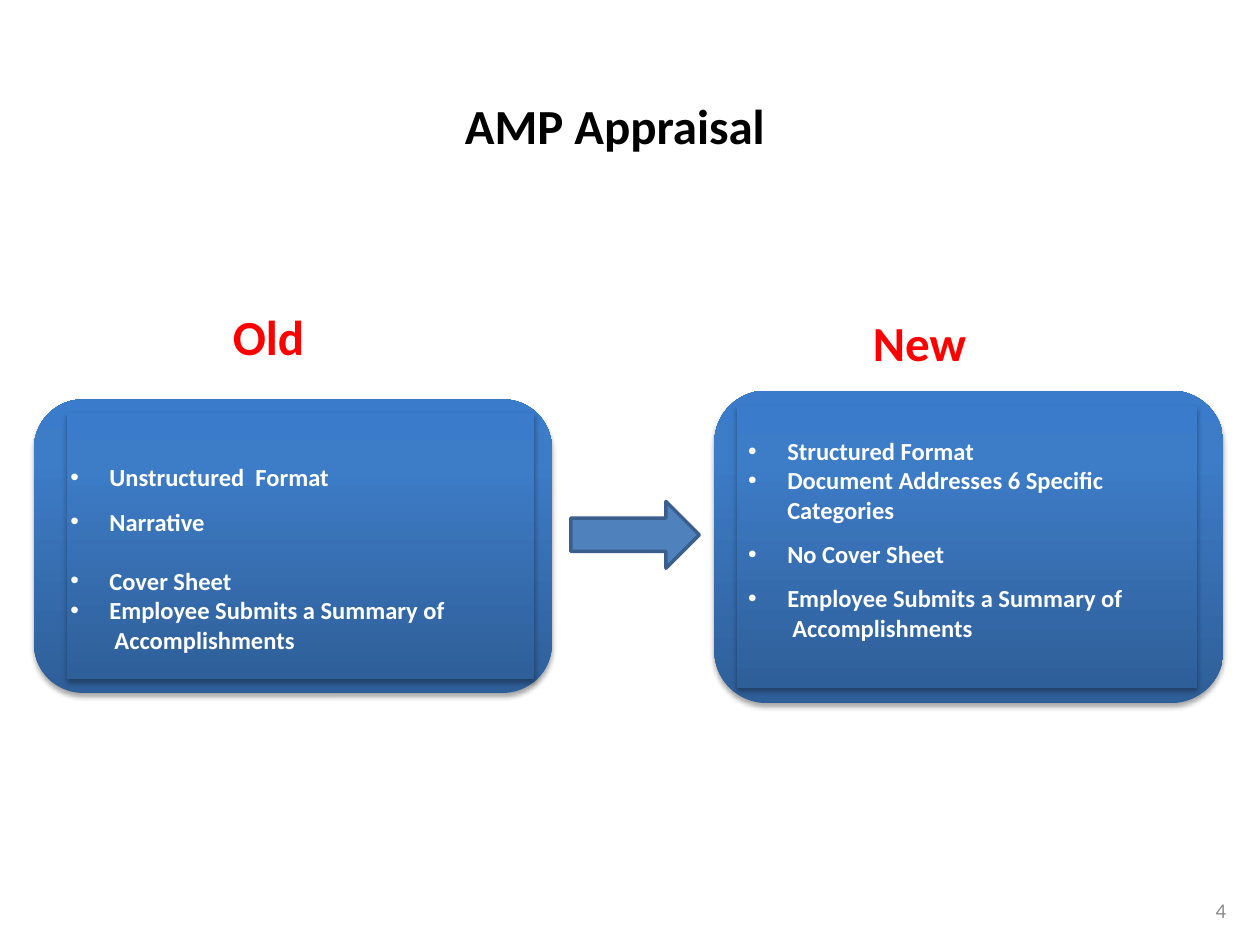
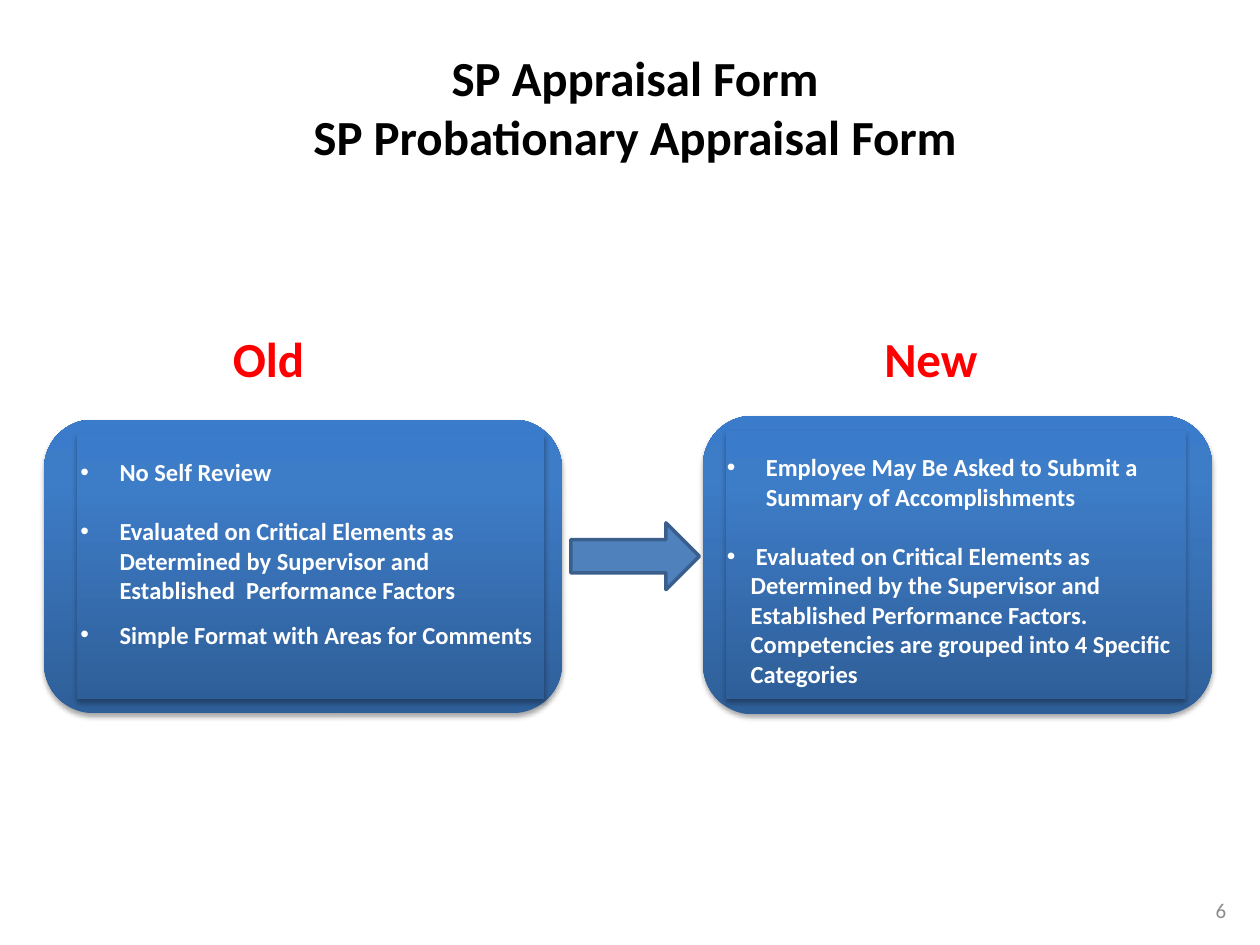
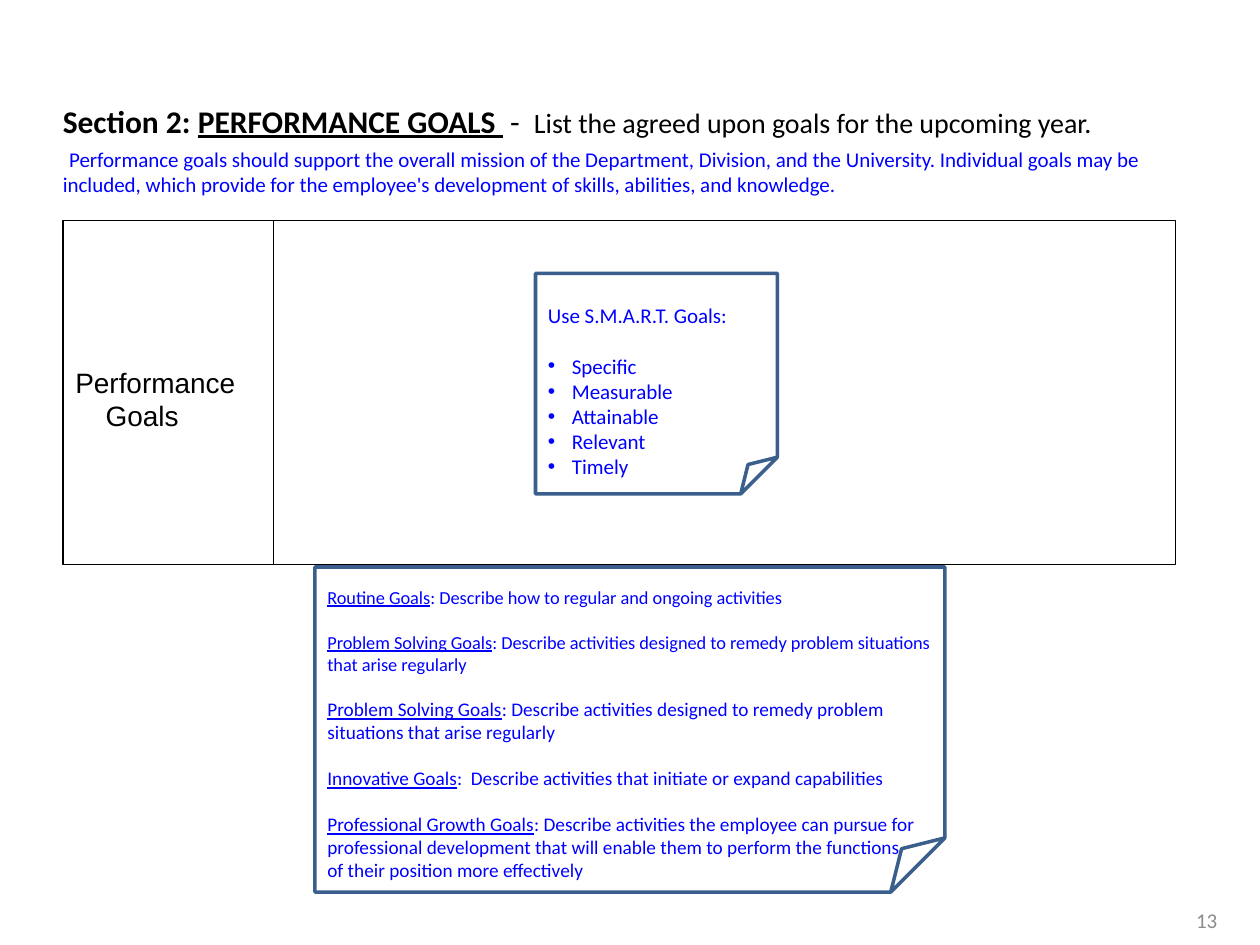
from copy import deepcopy
from dataclasses import dataclass

from lxml import etree
from pptx import Presentation
from pptx.dml.color import RGBColor
from pptx.enum.shapes import MSO_CONNECTOR, MSO_SHAPE
from pptx.enum.text import MSO_ANCHOR, PP_ALIGN
from pptx.oxml.ns import qn
from pptx.util import Inches, Pt

ROUNDED, RECT = MSO_SHAPE.ROUNDED_RECTANGLE, MSO_SHAPE.RECTANGLE
ARROW, NOTE = MSO_SHAPE.RIGHT_ARROW, MSO_SHAPE.FOLDED_CORNER
LEFT, CENTER, RIGHT = PP_ALIGN.LEFT, PP_ALIGN.CENTER, PP_ALIGN.RIGHT
TOP, MIDDLE, BOTTOM = MSO_ANCHOR.TOP, MSO_ANCHOR.MIDDLE, MSO_ANCHOR.BOTTOM


@dataclass(frozen=True)
class Theme:
    font: str = "Calibri"
    table_font: str = "Arial"
    black: str = "000000"
    white: str = "FFFFFF"
    red: str = "FF0000"
    blue: str = "0000FF"
    gray: str = "8C8C8C"
    arrow: str = "4F81BD"
    outline: str = "3A5F8C"
    gradient: tuple = ((0, "2F5F99"), (0.8, "3D7CC7"), (1, "3A7CCB"))
    title: float = 28
    section: float = 18
    cell: float = 16
    body: float = 14
    small: float = 12


T = Theme()


def add_box(s, kind, box, fill=None, line=None, weight=2):
    """Add a preset shape, or a text box when kind is None; a tuple fill is a gradient."""
    box = [Inches(v) for v in box]
    if kind is None:
        return s.shapes.add_textbox(*box)
    sp = s.shapes.add_shape(kind, *box)
    sp.shadow.inherit = False
    if isinstance(fill, tuple):
        sp.fill.gradient()
        sp.fill.gradient_angle = 90
        stops = sp._element.spPr.find(qn("a:gradFill")).find(qn("a:gsLst"))
        stops.append(deepcopy(stops[-1]))
        for stop, (position, color) in zip(sp.fill.gradient_stops, fill):
            stop.position = position
            stop.color.rgb = RGBColor.from_string(color)
        effects = sp._element.spPr.find(qn("a:effectLst"))
        shadow = etree.SubElement(effects, qn("a:outerShdw"), blurRad=str(Pt(3.1)),
                                  dist=str(Pt(1.8)), dir="5400000", rotWithShape="0")
        color = etree.SubElement(shadow, qn("a:srgbClr"), val=T.black)
        etree.SubElement(color, qn("a:alpha"), val="35000")
    elif fill:
        sp.fill.solid()
        sp.fill.fore_color.rgb = RGBColor.from_string(fill)
    else:
        sp.fill.background()
    if line:
        sp.line.color.rgb = RGBColor.from_string(line)
        sp.line.width = Pt(weight)
    else:
        sp.line.fill.background()
    return sp


def write(sp, paragraphs, size, color, bold=False, font=T.font,
          align=LEFT, anchor=TOP, top=0.05):
    """Fill sp with (runs, layout) pairs; runs are text or (text, font formats) pairs."""
    tf = sp.text_frame
    tf.word_wrap = True
    tf.vertical_anchor = anchor
    tf.margin_top = Inches(top)
    for i, (runs, layout) in enumerate(paragraphs):
        p = tf.paragraphs[0] if i == 0 else tf.add_paragraph()
        p.alignment = align
        p.space_before = Pt(layout.get("before", 0))
        left, bullet = layout.get("left", 0), layout.get("bullet", False)
        pPr = p._p.get_or_add_pPr()
        pPr.set("marL", str(Inches(left)))
        pPr.set("indent", str(Inches(-left if bullet else layout.get("first", 0))))
        if bullet:
            etree.SubElement(pPr, qn("a:buFont"), typeface="Arial")
            etree.SubElement(pPr, qn("a:buChar"), char="•")
        for text, formats in [(runs, {})] if isinstance(runs, str) else runs:
            r = p.add_run()
            r.text = text
            base = {"name": font, "size": Pt(size), "bold": bold}
            for name, value in {**base, **formats}.items():
                setattr(r.font, name, value)
            r.font.color.rgb = RGBColor.from_string(layout.get("color", color))


# Paragraph layouts for the bullet panels
ITEM = {"left": 0.31, "bullet": True}
SPACED = {**ITEM, "before": 8.5}
APART = {**ITEM, "before": 17}
CONTINUED = {"left": 0.31}
INDENTED = {"left": 0.35}
NARROW = {"left": 0.19}

COMPARISONS = [
    {
        "number": "4", "titles": ["AMP Appraisal"], "title_box": (0.67, 0.71, 8.42, 1.04),
        "arrow_top": 3.98,
        "panels": [
            ("Old", (1.75, 2.25, 4.42, 0.7), (0.27, 3.17, 4.11, 2.33), (0.46, 3.62, 4.21, 1.9), [
                ("Unstructured  Format", ITEM),
                ("Narrative", SPACED),
                ("Cover Sheet", APART),
                ("Employee Submits a Summary of", ITEM),
                ("Accomplishments", INDENTED),
            ]),
            ("New", (6.83, 2.3, 3.17, 0.7), (5.67, 3.1, 4.04, 2.48), (5.84, 3.41, 3.77, 2.1), [
                ("Structured Format", ITEM),
                ("Document Addresses 6 Specific Categories", ITEM),
                ("No Cover Sheet", SPACED),
                ("Employee Submits a Summary of", SPACED),
                ("Accomplishments", INDENTED),
            ]),
        ],
    },
    {
        "number": "6", "titles": ["SP Appraisal Form", "SP Probationary Appraisal Form"],
        "title_box": (0.83, 0.33, 8.42, 1.04), "arrow_top": 4.15,
        "panels": [
            ("Old", (1.75, 2.42, 4.42, 0.7), (0.35, 3.33, 4.11, 2.33), (0.54, 3.58, 4.21, 2), [
                ("No Self Review", ITEM),
                ("Evaluated on Critical Elements as", APART),
                ("Determined by Supervisor and", CONTINUED),
                ("Established  Performance Factors", CONTINUED),
                ("Simple Format with Areas for Comments", SPACED),
            ]),
            ("New", (6.92, 2.42, 1.17, 0.7), (5.58, 3.3, 4.04, 2.37), (5.67, 3.54, 3.96, 2.08), [
                ("Employee May Be Asked to Submit a Summary of Accomplishments", ITEM),
                ("Evaluated on Critical Elements as", {**APART, "left": 0.23}),
                ("Determined by the Supervisor and", NARROW),
                ("Established Performance Factors.", NARROW),
                ("Competencies are grouped into 4 Specific Categories", NARROW),
            ]),
        ],
    },
]
PANEL_INSETS = [(0.26, 0.11, 0.4), (0.18, 0.12, 0.39)]  # left, top, width lost

prs = Presentation()
prs.slide_width, prs.slide_height = Inches(10), Inches(7.5)
blank = prs.slide_layouts[6]

# Old and new forms side by side
for page in COMPARISONS:
    s = prs.slides.add_slide(blank)
    write(add_box(s, None, page["title_box"]), [(t, {}) for t in page["titles"]],
          T.title, T.black, bold=True, align=CENTER)
    for panel, (inset_x, inset_y, narrower) in zip(page["panels"], PANEL_INSETS):
        label, label_box, outer, text_box, items = panel
        write(add_box(s, None, label_box), [(label, {})], T.title, T.red,
              bold=True, anchor=BOTTOM)
        x, y, w, h = outer
        add_box(s, ROUNDED, outer, T.gradient)
        add_box(s, RECT, (x + inset_x, y + inset_y, w - narrower, h - 2 * inset_y), T.gradient)
        write(add_box(s, None, text_box), items, T.body, T.white, bold=True)
    add_box(s, ARROW, (4.53, page["arrow_top"], 1.02, 0.53), T.arrow, T.outline)
    write(add_box(s, None, (7.5, 7.02, 2.33, 0.4)), [(page["number"], {})],
          T.small, T.gray, align=RIGHT, anchor=MIDDLE)

# Performance goals
s = prs.slides.add_slide(blank)
plain = {"bold": False}
write(add_box(s, None, (0.4, 0.76, 9.18, 1.08)), [
    ([("Section 2: ", {}), ("PERFORMANCE GOALS ", {"underline": True}), (" -  ", plain),
      ("List the agreed upon goals for the upcoming year.", {**plain, "size": Pt(T.cell)})], {}),
    ([("Performance goals should support the overall mission of the Department, Division, "
       "and the University. Individual goals may be included, which provide for the "
       "employee's development of skills, abilities, and knowledge.",
       {**plain, "size": Pt(T.small)})],
     {"before": 3.8, "first": 0.05, "color": T.blue}),
], T.section, T.black, bold=True)

frame = add_box(s, RECT, (0.5, 1.75, 8.83, 2.73), line=T.black, weight=0.75)
write(frame, [("Performance", {}), ("Goals", {"left": 0.24})],
      T.cell, T.black, font=T.table_font, top=1.15)
divider = s.shapes.add_connector(MSO_CONNECTOR.STRAIGHT, Inches(2.17), Inches(1.75),
                                 Inches(2.17), Inches(4.48))
divider.line.color.rgb = RGBColor.from_string(T.black)
divider.line.width = Pt(0.75)
etree.SubElement(divider._element.spPr, qn("a:effectLst"))

smart = ["Specific", "Measurable", "Attainable", "Relevant", "Timely"]
bullet = {"left": 0.19, "bullet": True}
write(add_box(s, NOTE, (4.25, 2.17, 1.92, 1.75), line=T.outline),
      [("Use S.M.A.R.T. Goals:", {})]
      + [(word, {**bullet, "before": 0 if i else 14.6}) for i, word in enumerate(smart)],
      T.small, T.blue, top=0.23)

remedy = ": Describe activities designed to remedy problem situations that arise regularly"
goals = [
    ("Routine Goals", ": Describe how to regular and ongoing activities", 10.5),
    ("Problem Solving Goals", remedy, 10.5),
    ("Problem Solving Goals", remedy, 11),
    ("Innovative Goals", ":  Describe activities that initiate or expand capabilities", 11),
    ("Professional Growth Goals", ": Describe activities the employee can pursue for "
     "professional development that will enable them to perform the functions", 11),
]
paragraphs = [
    ([(name, {"size": Pt(size), "underline": True}), (text, {"size": Pt(size)})],
     {"before": 13 if i else 0})
    for i, (name, text, size) in enumerate(goals)
]
write(add_box(s, NOTE, (2.5, 4.5, 5, 2.58), line=T.outline),
      paragraphs + [("of their position more effectively", {})], 11, T.blue, top=0.15)
write(add_box(s, None, (7.43, 7.1, 2.33, 0.4)), [("13", {})],
      T.small, T.gray, align=RIGHT, anchor=MIDDLE)

prs.save("out.pptx")
